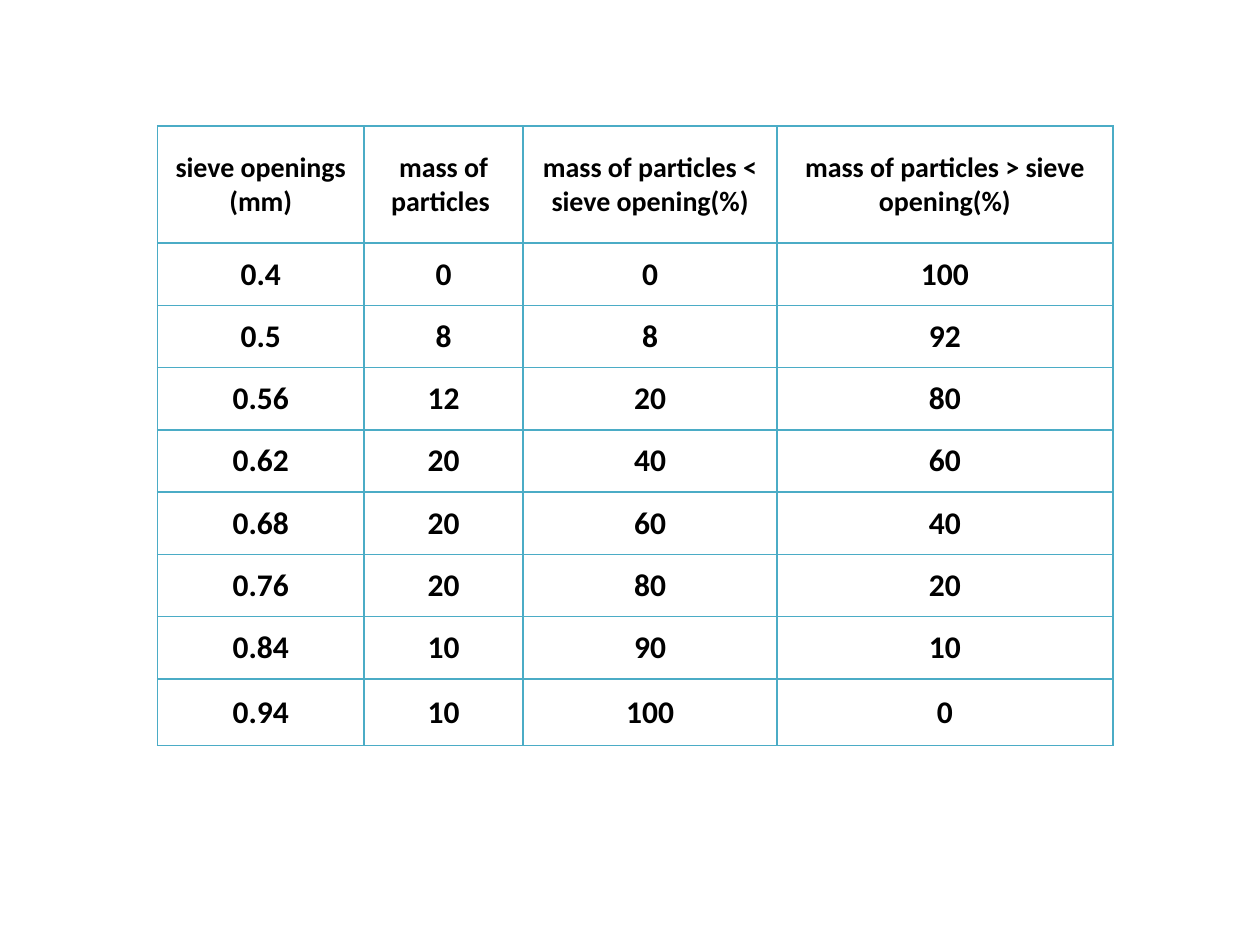
from lxml import etree
from pptx import Presentation
from pptx.dml.color import RGBColor
from pptx.enum.text import MSO_ANCHOR, PP_ALIGN
from pptx.oxml.ns import qn
from pptx.util import Pt

CENTER = PP_ALIGN.CENTER
MIDDLE = MSO_ANCHOR.MIDDLE

COLORS = {"text": "000000", "border": "4BACC6"}
FONT = "Calibri"
BLANK_LAYOUT = 6

HEADERS = [
    "sieve openings (mm)",
    "mass of particles ",
    "mass of particles < sieve opening(%)",
    "mass of particles > sieve opening(%)",
]
SIEVE_ROWS = [
    ("0.4", "0", "0", "100"),
    ("0.5", "8", "8", "92"),
    ("0.56", "12", "20", "80"),
    ("0.62", "20", "40", "60"),
    ("0.68", "20", "60", "40"),
    ("0.76", "20", "80", "20"),
    ("0.84", "10", "90", "10"),
    ("0.94", "10", "100", "0"),
]
COLUMN_SHARES = [118, 91, 145, 192]
ROW_SHARES = [67] + [35.6] * 7 + [38]


def set_borders(cell, color, width):
    properties = cell._tc.get_or_add_tcPr()
    for side in ("lnL", "lnR", "lnT", "lnB"):
        line = etree.SubElement(properties, qn(f"a:{side}"), w=str(Pt(width)))
        fill = etree.SubElement(line, qn("a:solidFill"))
        etree.SubElement(fill, qn("a:srgbClr"), val=color)


def format_cell(cell, text, size):
    set_borders(cell, COLORS["border"], 1)
    cell.fill.background()
    cell.margin_left = cell.margin_right = 0
    cell.margin_top = cell.margin_bottom = 0
    cell.vertical_anchor = MIDDLE
    cell.text = text
    paragraph = cell.text_frame.paragraphs[0]
    paragraph.alignment = CENTER
    paragraph.font.name = FONT
    paragraph.font.size = Pt(size)
    paragraph.font.bold = True
    paragraph.font.color.rgb = RGBColor.from_string(COLORS["text"])


def add_sieve_table(slide, left, top, width, height):
    rows = [HEADERS, *SIEVE_ROWS]
    table = slide.shapes.add_table(
        len(rows), len(HEADERS), Pt(left), Pt(top), Pt(width), Pt(height)
    ).table
    table.horz_banding = False
    for column, share in zip(table.columns, COLUMN_SHARES):
        column.width = Pt(width * share / sum(COLUMN_SHARES))
    for row, share in zip(table.rows, ROW_SHARES):
        row.height = Pt(height * share / sum(ROW_SHARES))
    for row_index, values in enumerate(rows):
        size = 16 if row_index == 0 else 18
        for column_index, text in enumerate(values):
            format_cell(table.cell(row_index, column_index), text, size)


def main():
    presentation = Presentation()
    presentation.slide_width = Pt(720)
    presentation.slide_height = Pt(540)
    slide = presentation.slides.add_slide(presentation.slide_layouts[BLANK_LAYOUT])
    add_sieve_table(slide, 90, 72, 546, 354.2)
    presentation.save("out.pptx")


if __name__ == "__main__":
    main()
